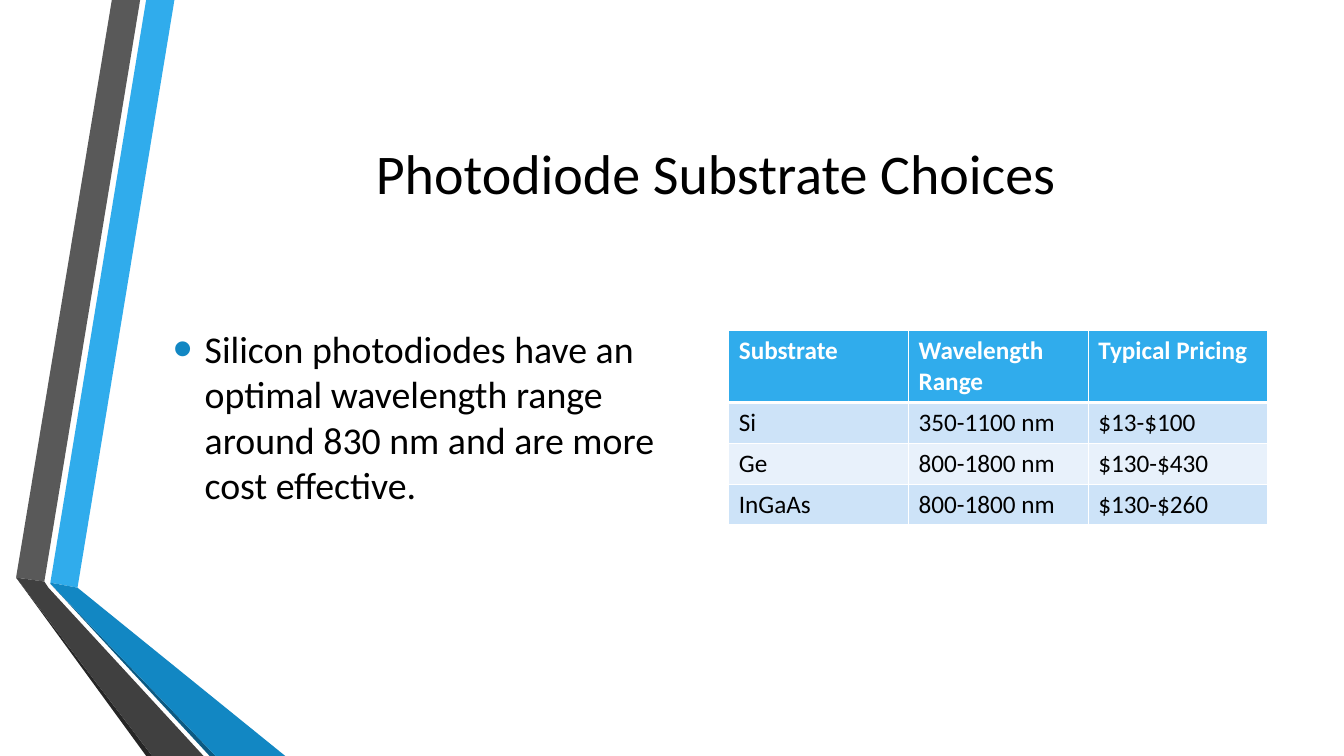
"""Build a slide on photodiode substrate choices."""
from lxml import etree
from pptx import Presentation
from pptx.dml.color import RGBColor
from pptx.enum import text
from pptx.oxml import ns
from pptx.util import Pt

WHITE = RGBColor(0xFF, 0xFF, 0xFF)
BLACK = RGBColor(0x00, 0x00, 0x00)
SKY = RGBColor(0x30, 0xAC, 0xEC)
BLUE = RGBColor(0x12, 0x87, 0xC3)
NAVY = RGBColor(0x0C, 0x5A, 0x82)
GRAY = RGBColor(0x59, 0x59, 0x59)
CHARCOAL = RGBColor(0x40, 0x40, 0x40)
SOOT = RGBColor(0x26, 0x26, 0x26)
BAND_DARK = RGBColor(0xCD, 0xE3, 0xF8)
BAND_LIGHT = RGBColor(0xE8, 0xF1, 0xFB)

RIBBONS = [
    (SKY, [(36, 416.2), (55.4, 419.8), (124.6, 0), (104.4, 0)]),
    (GRAY, [(100.1, 0), (79.9, 0), (11.5, 412.6), (31.7, 415.4)]),
    (SOOT, [(11.5, 412.6), (104.4, 540), (108.7, 540)]),
    (NAVY, [(36, 416.9), (149.8, 540), (154.1, 540)]),
    (BLUE, [(36, 416.2), (36, 416.9), (154.1, 540), (203.8, 540), (55.4, 419.8)]),
    (CHARCOAL, [(145.4, 540), (34.6, 419.8), (31.7, 415.4), (11.5, 412.6), (108.7, 540)]),
]

SUBSTRATES = [
    ("Substrate", "Wavelength Range", "Typical Pricing"),
    ("Si", "350-1100 nm", "$13-$100"),
    ("Ge", "800-1800 nm", "$130-$430"),
    ("InGaAs", "800-1800 nm", "$130-$260"),
]


def add_element(parent, tag, **attributes):
    return etree.SubElement(parent, ns.qn(tag), attributes)


def write(frame, wording, size, color=BLACK, bold=False, align=None, font="Calibri"):
    paragraph = frame.paragraphs[0]
    paragraph.alignment = align
    run = paragraph.add_run()
    run.text = wording
    run.font.name = font
    run.font.size = Pt(size)
    run.font.bold = bold
    run.font.color.rgb = color
    return paragraph


class SlideBuilder:
    def __init__(self, slide, bullet_color, border_color):
        self.slide = slide
        self.bullet_color = bullet_color
        self.border_color = border_color

    def ribbon(self, color, points):
        corners = [(Pt(x), Pt(y)) for x, y in points]
        builder = self.slide.shapes.build_freeform(*corners[0])
        builder.add_line_segments(corners[1:], close=True)
        shape = builder.convert_to_shape()
        shape.shadow.inherit = False
        shape.fill.solid()
        shape.fill.fore_color.rgb = color
        shape.line.fill.background()

    def text_box(self, left, top, width, height, wording, size, **style):
        shape = self.slide.shapes.add_textbox(Pt(left), Pt(top), Pt(width), Pt(height))
        frame = shape.text_frame
        frame.word_wrap = True
        frame.vertical_anchor = text.MSO_ANCHOR.MIDDLE
        return write(frame, wording, size, **style)

    def bullet_box(self, left, top, width, height, wording, size, indent):
        paragraph = self.text_box(left, top, width, height, wording, size)
        paragraph.space_before = Pt(0.2 * size)
        paragraph.space_after = Pt(6)
        properties = paragraph._p.get_or_add_pPr()
        properties.set("marL", str(Pt(indent)))
        properties.set("indent", str(-Pt(indent)))
        color = add_element(properties, "a:buClr")
        add_element(color, "a:srgbClr", val=str(self.bullet_color))
        add_element(properties, "a:buSzPct", val="145000")
        add_element(properties, "a:buFont", typeface="Arial")
        add_element(properties, "a:buChar", char="•")

    def border(self, cell, side, width):
        line = add_element(cell._tc.get_or_add_tcPr(), f"a:ln{side}", w=str(Pt(width)))
        fill = add_element(line, "a:solidFill")
        add_element(fill, "a:srgbClr", val=str(self.border_color))

    def table(self, left, top, column_width, row_heights, rows, size):
        table = self.slide.shapes.add_table(
            len(rows), len(rows[0]), Pt(left), Pt(top),
            Pt(column_width * len(rows[0])), Pt(sum(row_heights))).table
        for column in table.columns:
            column.width = Pt(column_width)
        for index, wordings in enumerate(rows):
            table.rows[index].height = Pt(row_heights[index])
            header = index == 0
            fill = SKY if header else BAND_DARK if index % 2 else BAND_LIGHT
            for cell, wording in zip(table.rows[index].cells, wordings):
                for side in "LRTB":
                    thick = (side == "B" and header) or (side == "T" and index == 1)
                    self.border(cell, side, 3 if thick else 1)
                cell.fill.solid()
                cell.fill.fore_color.rgb = fill
                write(cell.text_frame, wording, size,
                      color=WHITE if header else BLACK, bold=header)


def main():
    presentation = Presentation()
    presentation.slide_width = Pt(960)
    presentation.slide_height = Pt(540)
    slide = presentation.slides.add_slide(presentation.slide_layouts[6])
    builder = SlideBuilder(slide, bullet_color=BLUE, border_color=WHITE)
    for color, points in RIBBONS:
        builder.ribbon(color, points)
    builder.text_box(116.6, 54, 789.1, 138.2, "Photodiode Substrate Choices", 40,
                     align=text.PP_ALIGN.CENTER)
    builder.bullet_box(
        116.6, 174.2, 385.2, 246.2,
        "Silicon photodiodes have an optimal wavelength range around 830 nm "
        "and are more cost effective.", 27, indent=22.5)
    builder.table(520.6, 236.2, 128.4, [51.2, 29.2, 29.2, 29.2], SUBSTRATES, 18)
    presentation.save("out.pptx")


if __name__ == "__main__":
    main()
